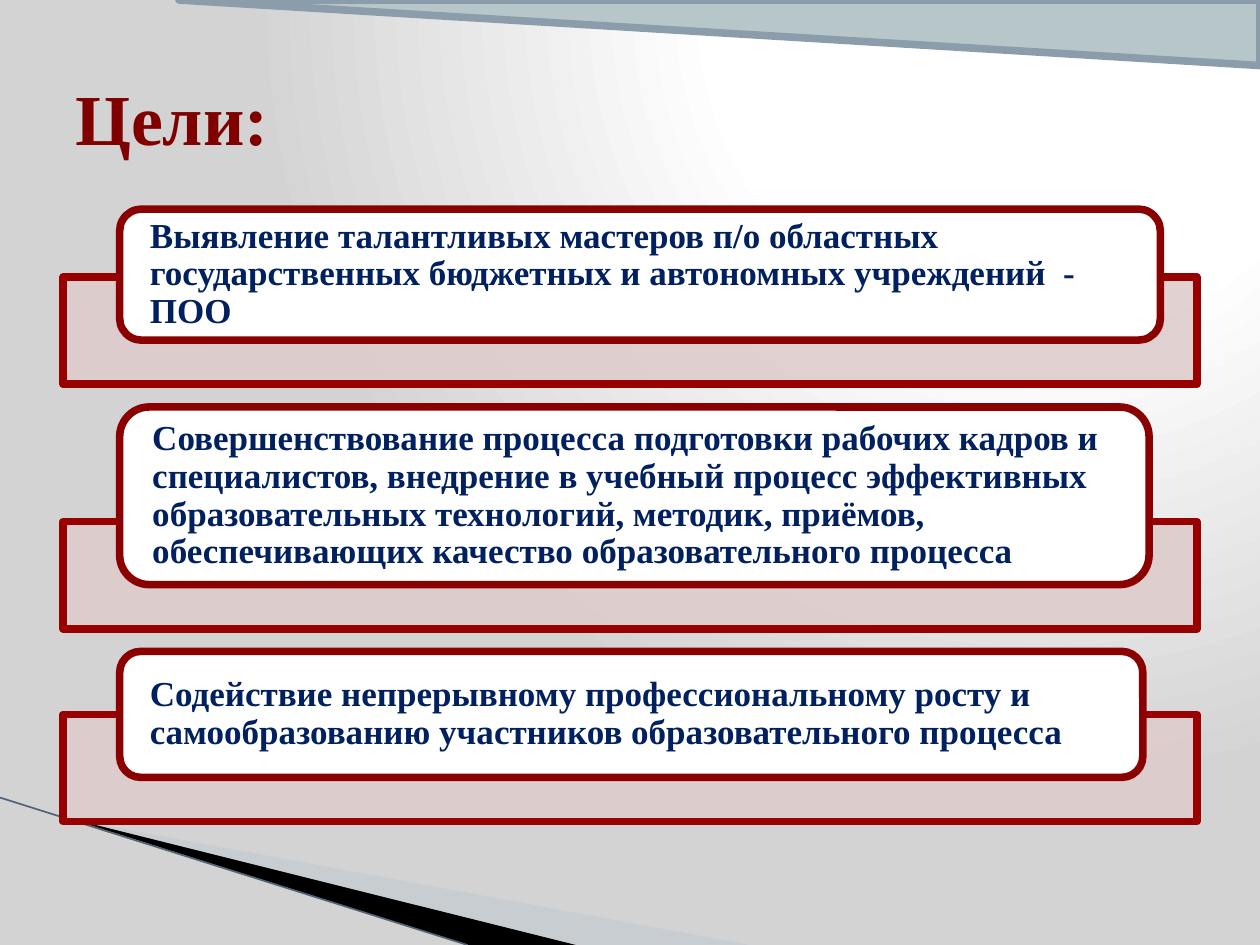
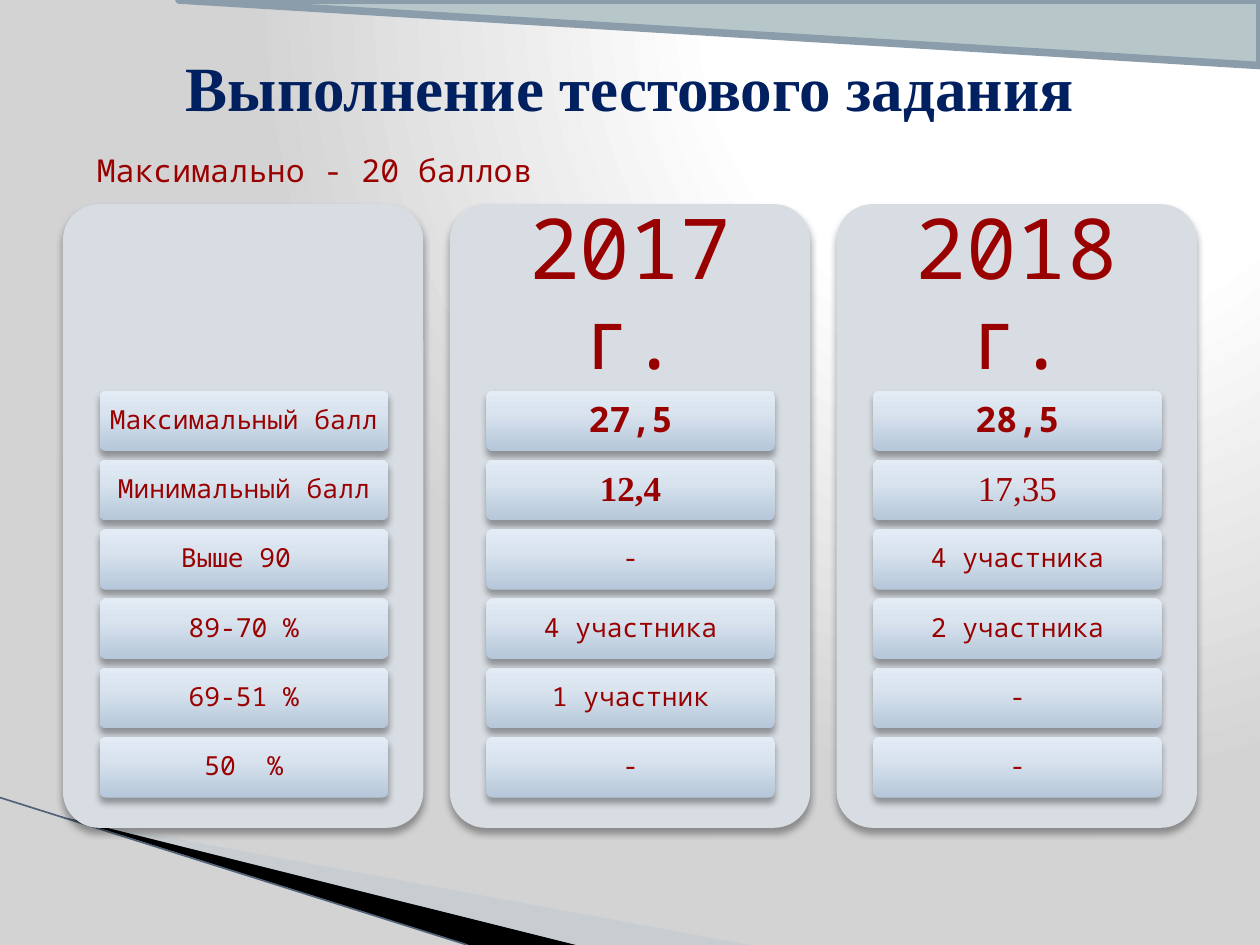
from lxml import etree
from pptx import Presentation
from pptx.dml.color import RGBColor
from pptx.enum.shapes import MSO_CONNECTOR, MSO_SHAPE
from pptx.enum.text import MSO_ANCHOR, PP_ALIGN
from pptx.oxml.ns import qn
from pptx.util import Inches, Pt

WHITE = RGBColor(0xFF, 0xFF, 0xFF)
BLACK = RGBColor(0x00, 0x00, 0x00)
LIGHT_GRAY = RGBColor(0xD3, 0xD3, 0xD3)
NAVY = RGBColor(0x00, 0x20, 0x60)
MAROON = RGBColor(0x80, 0x00, 0x00)
DARK_RED = RGBColor(0x8B, 0x00, 0x00)
RED = RGBColor(0x99, 0x00, 0x00)
PINK = RGBColor(0xDE, 0xCC, 0xCC)
CARD_GRAY = RGBColor(0xD8, 0xDD, 0xE3)
BAND_FILL = RGBColor(0xB7, 0xC7, 0xC9)
BAND_LINE = RGBColor(0x8B, 0x9D, 0xAB)
WEDGE_BLUE = RGBColor(0xB7, 0xC4, 0xD0)
SLATE = RGBColor(0x50, 0x63, 0x78)
CELL_STOPS = [
    (0, RGBColor(0xB5, 0xC7, 0xD9)),
    (65, RGBColor(0xDA, 0xE4, 0xEF)),
    (100, RGBColor(0xE3, 0xEC, 0xF5)),
]
BACKGROUND_STOPS = [(0, WHITE), (40, WHITE), (100, LIGHT_GRAY)]

SERIF = "Times New Roman"
MONO = "Noto Sans Mono"
THICK_LINE = Pt(4.33)

GOALS = [
    (8.26, 1.04, "Выявление талантливых мастеров п/о областных государственных "
                 "бюджетных и автономных учреждений  - ПОО"),
    (8.17, 1.41, "Совершенствование процесса подготовки рабочих кадров и специалистов, "
                 "внедрение в учебный процесс эффективных образовательных технологий, "
                 "методик, приёмов, обеспечивающих качество образовательного процесса"),
    (8.12, 1.0, "Содействие непрерывному профессиональному росту и самообразованию "
                "участников образовательного процесса"),
]
SCORE_CARDS = [
    ("", ["Максимальный балл", "Минимальный балл", "Выше 90 ",
          "89-70 %", "69-51 %", "50  %"]),
    ("2017 г.", ["27,5", "12,4", "-", "4 участника", "1 участник", "-"]),
    ("2018 г.", ["28,5", "17,35", "4 участника", "2 участника", "-", "-"]),
]
SCORE_STYLES = {
    "27,5": (20, MONO, True),
    "28,5": (20, MONO, True),
    "12,4": (20, SERIF, True),
    "17,35": (20, SERIF, False),
}


class Deck:
    def __init__(self):
        self.presentation = Presentation()
        self.presentation.slide_width = Inches(10)
        self.presentation.slide_height = Inches(7.5)
        self.slide = None

    def add_slide(self):
        self.slide = self.presentation.slides.add_slide(self.presentation.slide_layouts[6])
        self.slide.background.fill.solid()
        properties = self.slide.element.find(".//" + qn("p:bgPr"))
        shade = self.gradient(properties, BACKGROUND_STOPS, "a:path", path="circle")
        etree.SubElement(shade, qn("a:fillToRect"), l="65000", b="98000")
        self.wedge([(0.55, 6.5), (5.95, 7.5), (4.56, 7.5)], WEDGE_BLUE, 40)
        self.wedge([(0.53, 6.49), (4.57, 7.5), (3.72, 7.5)], BLACK)
        self.line(0, 6.33, 3.71, 7.5, SLATE, 0.95)
        band = self.shape(MSO_SHAPE.RIGHT_TRIANGLE, 1.42, 0, 8.58, 0.52, BAND_FILL, BAND_LINE)
        band.rotation = 180

    def gradient(self, properties, stops, shade, **attributes):
        solid = properties.find(qn("a:solidFill"))
        fill = etree.Element(qn("a:gradFill"), rotWithShape="1")
        stop_list = etree.SubElement(fill, qn("a:gsLst"))
        for position, color in stops:
            stop = etree.SubElement(stop_list, qn("a:gs"), pos=str(position * 1000))
            etree.SubElement(stop, qn("a:srgbClr"), val=str(color))
        properties.replace(solid, fill)
        return etree.SubElement(fill, qn(shade), **attributes)

    def paint(self, shape, fill, line=None, opacity=100):
        shape.shadow.inherit = False
        shape.fill.solid()
        shape.fill.fore_color.rgb = fill
        if opacity < 100:
            color = shape.element.spPr.find(qn("a:solidFill"))[0]
            etree.SubElement(color, qn("a:alpha"), val=str(opacity * 1000))
        if line is None:
            shape.line.fill.background()
        else:
            shape.line.color.rgb = line
            shape.line.width = THICK_LINE

    def shape(self, kind, left, top, width, height, fill, line=None, opacity=100):
        shape = self.slide.shapes.add_shape(
            kind, Inches(left), Inches(top), Inches(width), Inches(height))
        self.paint(shape, fill, line, opacity)
        return shape

    def wedge(self, points, fill, opacity=100):
        corners = [(Inches(x), Inches(y)) for x, y in points]
        builder = self.slide.shapes.build_freeform(*corners[0])
        builder.add_line_segments(corners[1:], close=True)
        self.paint(builder.convert_to_shape(), fill, opacity=opacity)

    def line(self, x1, y1, x2, y2, color, width):
        connector = self.slide.shapes.add_connector(
            MSO_CONNECTOR.STRAIGHT, Inches(x1), Inches(y1), Inches(x2), Inches(y2))
        connector.line.color.rgb = color
        connector.line.width = Pt(width)
        etree.SubElement(connector.element.spPr, qn("a:effectLst"))

    def raised(self, left, top, width, height, fill):
        shape = self.shape(MSO_SHAPE.ROUNDED_RECTANGLE, left, top, width, height, fill)
        shape.adjustments[0] = 0.1
        effects = shape.element.spPr.find(qn("a:effectLst"))
        shadow = etree.SubElement(effects, qn("a:outerShdw"), blurRad=str(Pt(4)),
                                  dist=str(Pt(3)), dir="5400000", rotWithShape="0")
        color = etree.SubElement(shadow, qn("a:srgbClr"), val=str(BLACK))
        etree.SubElement(color, qn("a:alpha"), val="35000")
        return shape

    def fill_text(self, shape, text, size, font, color, bold=False, align=PP_ALIGN.LEFT,
                  insets=(0.1, 0.05), spacing=1.0):
        frame = shape.text_frame
        frame.word_wrap = True
        frame.vertical_anchor = MSO_ANCHOR.MIDDLE
        frame.margin_left = frame.margin_right = Inches(insets[0])
        frame.margin_top = frame.margin_bottom = Inches(insets[1])
        paragraph = frame.paragraphs[0]
        paragraph.alignment = align
        paragraph.line_spacing = spacing
        run = paragraph.add_run()
        run.text = text
        run.font.size = Pt(size)
        run.font.name = font
        run.font.bold = bold
        run.font.color.rgb = color

    def text(self, left, top, width, height, text, *style, **options):
        box = self.slide.shapes.add_textbox(
            Inches(left), Inches(top), Inches(width), Inches(height))
        self.fill_text(box, text, *style, **options)

    def title(self, top, height, text, size, color, align=PP_ALIGN.LEFT):
        self.text(0.5, top, 9, height, text, size, SERIF, color, bold=True, align=align)

    def goal(self, top, width, height, text):
        plate_top = top + height - 0.5
        plate_height = 0.85
        self.shape(MSO_SHAPE.RECTANGLE, 0.5, plate_top, 9, plate_height, PINK, RED, 90)
        label = self.shape(MSO_SHAPE.ROUNDED_RECTANGLE, 0.95, top, width, height,
                           WHITE, DARK_RED)
        self.fill_text(label, text, 20, SERIF, NAVY, bold=True, insets=(0.19, 0), spacing=0.9)
        return plate_top + plate_height

    def score_card(self, left, heading, scores):
        top, width = 1.62, 2.86
        self.raised(left, top, width, 4.95, CARD_GRAY)
        if heading:
            self.text(left, top, width, 1.48, heading, 48, MONO, RED,
                      align=PP_ALIGN.CENTER, insets=(0.2, 0.2), spacing=0.9)
        for row, score in enumerate(scores):
            cell = self.raised(left + 0.29, 3.1 + row * 0.55, 2.29, 0.48, WHITE)
            self.gradient(cell.element.spPr, CELL_STOPS, "a:lin", ang="16200000", scaled="0")
            size, font, bold = SCORE_STYLES.get(score, (15, MONO, False))
            self.fill_text(cell, score, size, font, RED, bold=bold, align=PP_ALIGN.CENTER,
                           insets=(0.03, 0.02), spacing=0.9)


def main():
    deck = Deck()

    deck.add_slide()
    deck.title(0.3, 1.25, "Цели:", 41, MAROON)
    top = 1.66
    for width, height, goal in GOALS:
        top = deck.goal(top, width, height, goal) + 0.18

    deck.add_slide()
    deck.title(0.3, 0.77, "Выполнение тестового задания", 36, NAVY, PP_ALIGN.CENTER)
    for column, (heading, scores) in enumerate(SCORE_CARDS):
        deck.score_card(0.5 + column * 3.07, heading, scores)
    deck.text(0.67, 1.15, 3.7, 0.4, "Максимально - 20 баллов", 18, MONO, RED)

    deck.presentation.save("out.pptx")


if __name__ == "__main__":
    main()
